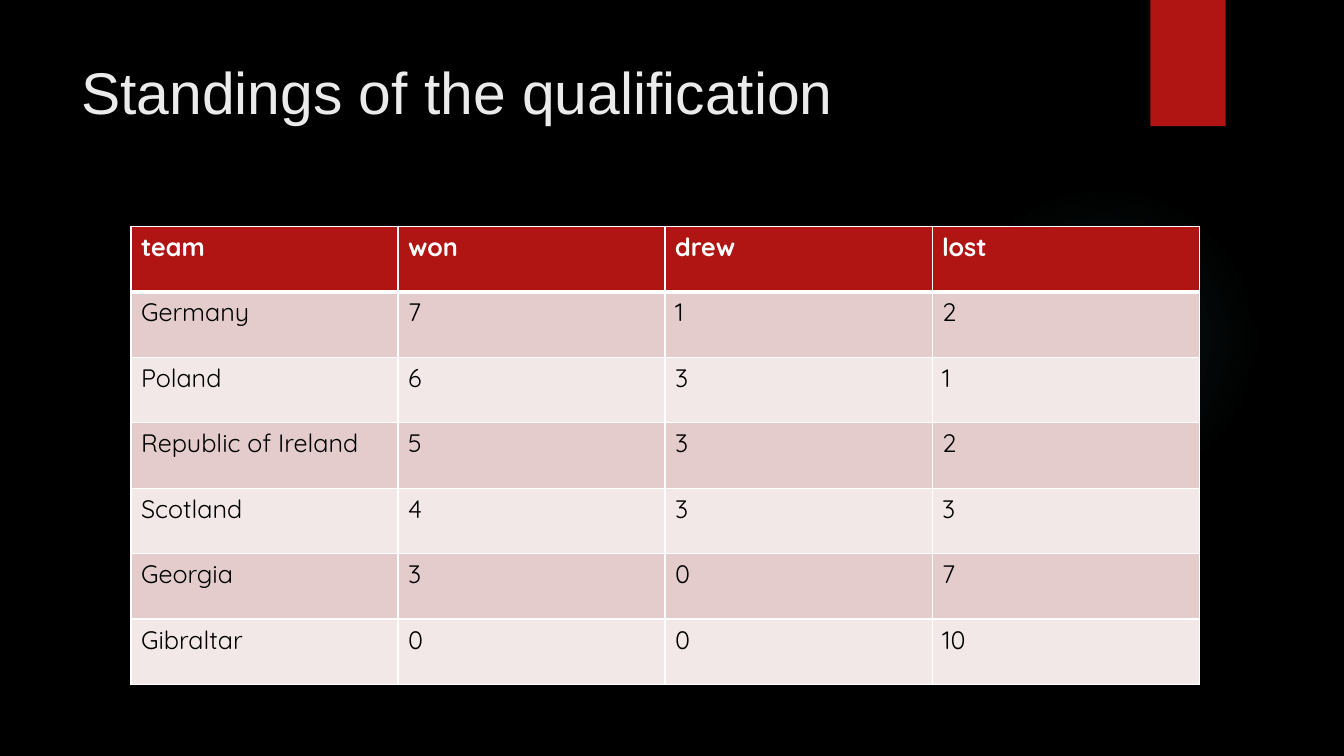
from pptx import Presentation
from pptx.dml.color import RGBColor
from pptx.enum.shapes import MSO_SHAPE as Shape
from pptx.enum.text import MSO_ANCHOR as Anchor
from pptx.oxml import parse_xml
from pptx.oxml.ns import nsdecls
from pptx.util import Cm, Pt

BLACK = RGBColor(0x00, 0x00, 0x00)
WHITE = RGBColor(0xFF, 0xFF, 0xFF)
OFF_WHITE = RGBColor(0xEB, 0xEB, 0xEB)
RED = RGBColor(0xB0, 0x15, 0x13)
ROSE = RGBColor(0xE4, 0xCC, 0xCC)
PALE_ROSE = RGBColor(0xF2, 0xE8, 0xE7)
TEAL = RGBColor(0x50, 0xB9, 0xC1)

STANDINGS = [
    ("team", "won", "drew", "lost"),
    ("Germany", 7, 1, 2),
    ("Poland", 6, 3, 1),
    ("Republic of Ireland", 5, 3, 2),
    ("Scotland", 4, 3, 3),
    ("Georgia", 3, 0, 7),
    ("Gibraltar", 0, 0, 10),
]
COL_WIDTH, ROW_HEIGHT = Cm(6.73), Cm(1.65)


def add_plain_shape(slide, kind, left, top, width, height):
    """Add a shape without outline or shadow."""
    sp = slide.shapes.add_shape(kind, left, top, width, height)
    sp.line.fill.background()
    sp.shadow.inherit = False
    return sp


def add_glow(slide, left, top, size):
    """Add a faint circle that fades out towards its edge."""
    sp = add_plain_shape(slide, Shape.OVAL, left, top, size, size)
    stops = "".join(
        f'<a:gs pos="{pos * 1000}"><a:srgbClr val="{TEAL}">'
        f'<a:alpha val="{alpha * 1000}"/></a:srgbClr></a:gs>'
        for pos, alpha in ((0, 7), (36, 6), (69, 0), (100, 0))
    )
    fill = parse_xml(
        f'<a:gradFill {nsdecls("a")}><a:gsLst>{stops}</a:gsLst><a:path path="circle">'
        '<a:fillToRect l="50000" t="50000" r="50000" b="50000"/></a:path></a:gradFill>'
    )
    sp.element.spPr.insert(2, fill)


def add_tab(slide, left, top, width, height):
    """Add the red tab that hangs from the top edge."""
    sp = add_plain_shape(slide, Shape.RECTANGLE, left, top, width, height)
    sp.fill.solid()
    sp.fill.fore_color.rgb = RED


def add_title(slide, text, left, top, width, height):
    """Add the slide title."""
    tf = slide.shapes.add_textbox(left, top, width, height).text_frame
    tf.word_wrap = True
    tf.vertical_anchor = Anchor.TOP
    p = tf.paragraphs[0]
    p.text = text
    p.font.name = "Arial"
    p.font.size = Pt(42)
    p.font.color.rgb = OFF_WHITE


def set_borders(cell, top, bottom):
    """Draw white borders, with the top and bottom widths in points."""
    tc_pr = cell._tc.get_or_add_tcPr()
    for side, width in (("L", 1), ("R", 1), ("T", top), ("B", bottom)):
        tc_pr.append(parse_xml(
            f'<a:ln{side} {nsdecls("a")} w="{Pt(width)}"><a:solidFill>'
            f'<a:srgbClr val="{WHITE}"/></a:solidFill></a:ln{side}>'
        ))


def fill_cell(cell, value, row):
    """Write and style one cell according to its row."""
    is_header = row == 0
    set_borders(cell, top=3 if row == 1 else 1, bottom=3 if is_header else 1)
    cell.fill.solid()
    cell.fill.fore_color.rgb = RED if is_header else ROSE if row % 2 else PALE_ROSE
    p = cell.text_frame.paragraphs[0]
    p.text = str(value)
    p.font.name = "Quicksand"
    p.font.size = Pt(18)
    p.font.bold = is_header
    p.font.color.rgb = WHITE if is_header else BLACK


def add_standings(slide, rows, left, top):
    """Add the standings table with equal rows and columns."""
    n_rows, n_cols = len(rows), len(rows[0])
    table = slide.shapes.add_table(
        n_rows, n_cols, left, top, COL_WIDTH * n_cols, ROW_HEIGHT * n_rows
    ).table
    for i, row in enumerate(rows):
        for j, value in enumerate(row):
            fill_cell(table.cell(i, j), value, i)


def main():
    """Build and save the slide."""
    prs = Presentation()
    prs.slide_width, prs.slide_height = Cm(33.87), Cm(19.05)
    slide = prs.slides.add_slide(prs.slide_layouts[6])
    slide.background.fill.solid()
    slide.background.fill.fore_color.rgb = BLACK
    add_glow(slide, Cm(23.9), Cm(4.65), Cm(7.82))
    add_tab(slide, Cm(28.99), Cm(0), Cm(1.9), Cm(3.18))
    add_title(slide, "Standings of the qualification", Cm(1.8), Cm(1.27), Cm(26.14), Cm(3.89))
    add_standings(slide, STANDINGS, Cm(3.3), Cm(5.7))
    prs.save("out.pptx")


if __name__ == "__main__":
    main()
